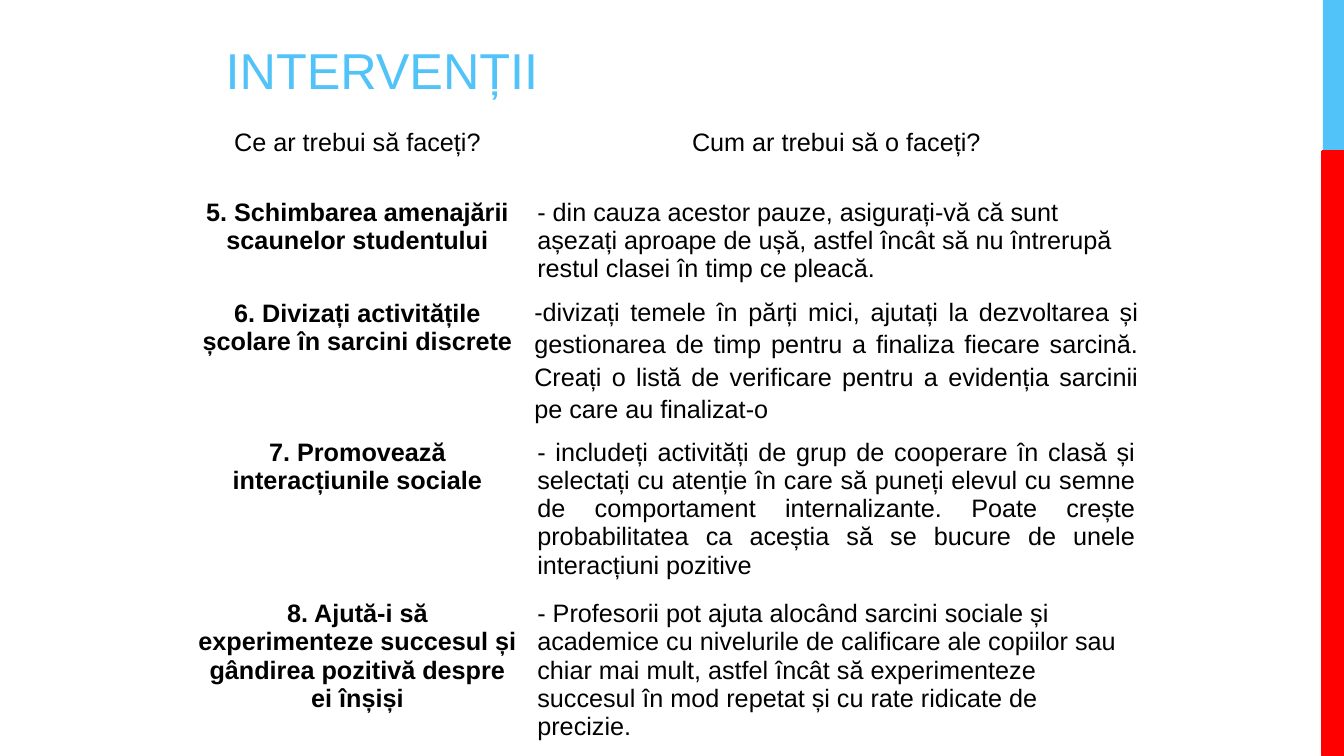
from pptx import Presentation
from pptx.dml.color import RGBColor
from pptx.enum.shapes import MSO_SHAPE
from pptx.enum.text import MSO_ANCHOR, PP_ALIGN as Align
from pptx.util import Emu, Pt

BLUE, RED, BLACK = "51C3F9", "FF0000", "000000"
WIDTH, HEIGHT = 1333, 750
HEADERS = ["Ce ar trebui să faceți?", "Cum ar trebui să o faceți?"]
INTERVENTIONS = [
    ("5. Schimbarea amenajării scaunelor studentului",
     "- din cauza acestor pauze, asigurați-vă că sunt așezați aproape de ușă, astfel încât "
     "să nu întrerupă restul clasei în timp ce pleacă.", Align.LEFT),
    ("6. Divizați activitățile școlare în sarcini discrete",
     "-divizați temele în părți mici, ajutați la dezvoltarea și gestionarea de timp pentru a "
     "finaliza fiecare sarcină. Creați o listă de verificare pentru a evidenția sarcinii pe "
     "care au finalizat-o", Align.JUSTIFY),
    ("7. Promovează interacțiunile sociale",
     "- includeți activități de grup de cooperare în clasă și selectați cu atenție în care să "
     "puneți elevul cu semne de comportament internalizante. Poate crește probabilitatea ca "
     "aceștia să se bucure de unele interacțiuni pozitive", Align.JUSTIFY),
    ("8. Ajută-i să experimenteze succesul și gândirea pozitivă despre ei înșiși",
     "- Profesorii pot ajuta alocând sarcini sociale și academice cu nivelurile de calificare "
     "ale copiilor sau chiar mai mult, astfel încât să experimenteze succesul în mod repetat "
     "și cu rate ridicate de precizie.", Align.LEFT),
]


def px(length):
    return Emu(length * 9144)


def color(hex_string):
    return RGBColor.from_string(hex_string)


class SlideBuilder:
    """Holds the text style and the current slide, and adds elements to it."""

    def __init__(self, slide, font_name="Arial", body_size=18):
        self.slide = slide
        self.font_name = font_name
        self.body_size = body_size

    def style(self, paragraph, size, hex_string, align=Align.LEFT, bold=False):
        paragraph.alignment = align
        font = paragraph.font
        font.name, font.size, font.bold = self.font_name, Pt(size), bold
        font.color.rgb = color(hex_string)

    def bar(self, left, top, width, height, fill, line_width=0):
        shape = self.slide.shapes.add_shape(
            MSO_SHAPE.RECTANGLE, px(left), px(top), px(width), px(height))
        shape.shadow.inherit = False
        shape.fill.solid()
        shape.fill.fore_color.rgb = color(fill)
        if line_width:
            shape.line.color.rgb = color(fill)
            shape.line.width = Pt(line_width)
        else:
            shape.line.fill.background()

    def title(self, text, left, top, width, height):
        box = self.slide.shapes.add_textbox(px(left), px(top), px(width), px(height))
        frame = box.text_frame
        frame.word_wrap = True
        frame.vertical_anchor = MSO_ANCHOR.BOTTOM
        frame.text = text
        self.style(frame.paragraphs[0], 36, BLUE)

    def table(self, left, top, columns, rows):
        table = self.slide.shapes.add_table(
            len(rows), len(columns), px(left), px(top), px(sum(columns)), px(sum(rows))).table
        table.first_row = table.horz_banding = False
        for column, width in zip(table.columns, columns):
            column.width = px(width)
        for row, height in zip(table.rows, rows):
            row.height = px(height)
        return table

    def cell(self, cell, text, align=Align.CENTER, bold=False):
        cell.fill.background()
        cell.text = text
        paragraph = cell.text_frame.paragraphs[0]
        self.style(paragraph, self.body_size, BLACK, align, bold)
        return paragraph


def main():
    presentation = Presentation()
    presentation.slide_width, presentation.slide_height = px(WIDTH), px(HEIGHT)
    builder = SlideBuilder(presentation.slides.add_slide(presentation.slide_layouts[6]))
    builder.bar(1312, 0, 21, 150, BLUE)
    builder.bar(1312, 150, 21, 600, RED, line_width=2.25)
    builder.title("INTERVENȚII", 214, 21, 633, 83)

    table = builder.table(186, 123, columns=[337, 613], rows=[69, 100, 90, 103, 128])
    for column, header in enumerate(HEADERS):
        builder.cell(table.cell(0, column), header)
    for row, (action, method, align) in enumerate(INTERVENTIONS, start=1):
        builder.cell(table.cell(row, 0), action, bold=True)
        builder.cell(table.cell(row, 1), method, align)

    spaced_cell = table.cell(2, 1)
    spaced_cell.margin_left = spaced_cell.margin_right = px(7)
    spaced_cell.margin_top = spaced_cell.margin_bottom = px(0)
    spaced_cell.text_frame.paragraphs[0].line_spacing = 1.15
    presentation.save("out.pptx")


if __name__ == "__main__":
    main()
